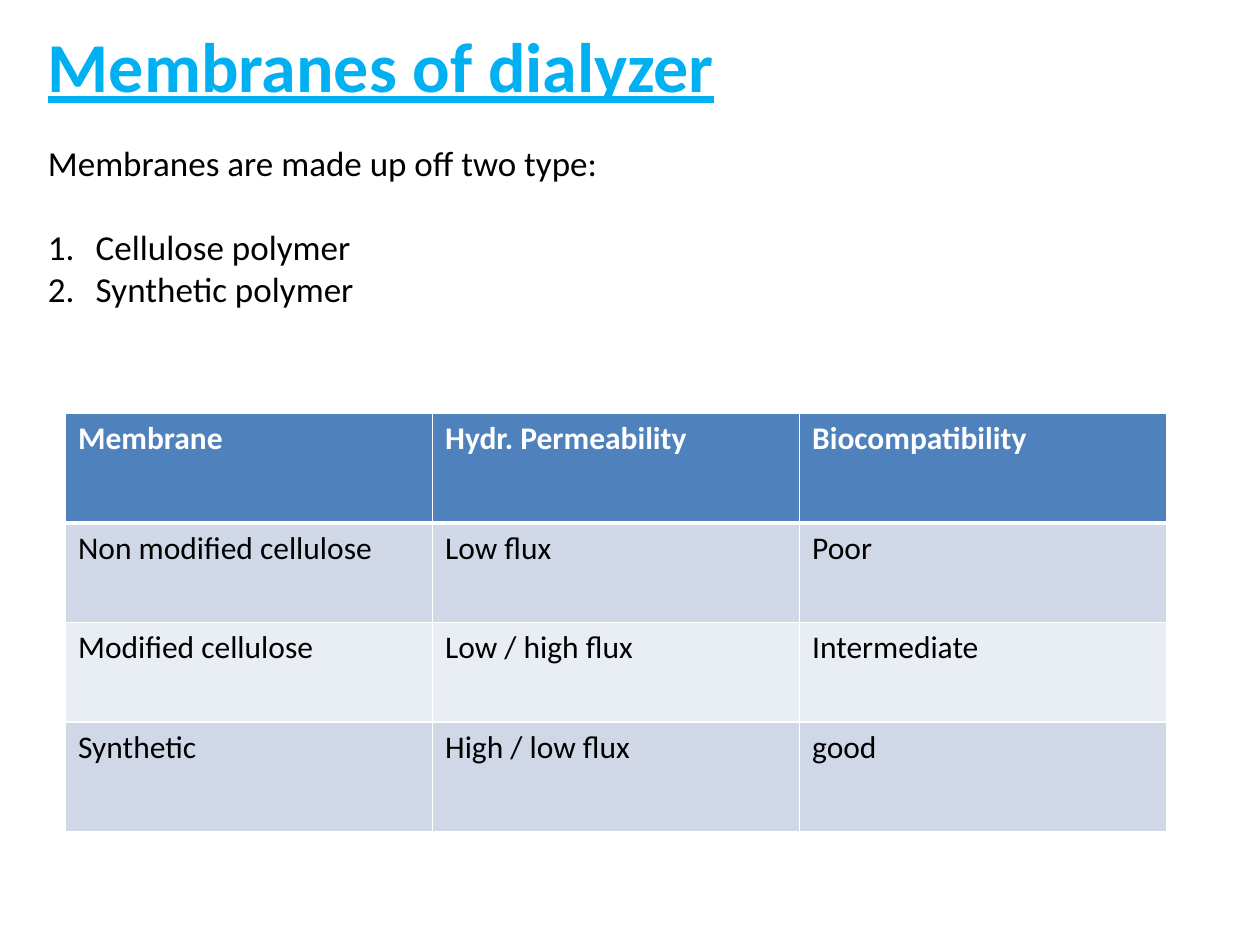
"""Build a slide on the membranes used in a dialyzer."""
from pptx import Presentation
from pptx.dml.color import RGBColor
from pptx.enum.text import MSO_ANCHOR, MSO_AUTO_SIZE, PP_ALIGN
from pptx.oxml import parse_xml
from pptx.oxml.ns import nsdecls
from pptx.util import Inches, Pt

FONT = "Calibri"
SKY = RGBColor(0x00, 0xB0, 0xF0)
BLACK = RGBColor(0x00, 0x00, 0x00)
WHITE = RGBColor(0xFF, 0xFF, 0xFF)
HEADER = RGBColor(0x4F, 0x81, 0xBD)
BANDS = (RGBColor(0xE9, 0xED, 0xF4), RGBColor(0xD0, 0xD8, 0xE8))

TITLE = "Membranes of dialyzer"
INTRO = "Membranes are made up off two type:"
POLYMERS = ["Cellulose polymer", "Synthetic polymer"]
MEMBRANES = [
    ("Membrane", "Hydr. Permeability", "Biocompatibility"),
    ("Non modified cellulose", "Low flux", "Poor"),
    ("Modified cellulose", "Low / high flux", "Intermediate"),
    ("Synthetic", "High / low flux", "good"),
]
ROW_HEIGHTS = (0.87, 0.79, 0.79, 0.87)
TABLE_LEFT, TABLE_TOP, TABLE_WIDTH = 0.52, 3.28, 8.74


def style(font, size, color, bold=False):
    font.name, font.size, font.bold = FONT, Pt(size), bold
    font.color.rgb = color


def place(box, left, top, width, height):
    box.left, box.top = Inches(left), Inches(top)
    box.width, box.height = Inches(width), Inches(height)
    frame = box.text_frame
    frame.word_wrap = False
    frame.auto_size = MSO_AUTO_SIZE.NONE
    frame.vertical_anchor = MSO_ANCHOR.TOP
    return frame


def set_bullet(paragraph, indent, bullet):
    props = paragraph._p.get_or_add_pPr()
    props.set("marL", str(Inches(indent)))
    props.set("indent", str(-Inches(indent)))
    props.append(parse_xml(f"<a:{bullet} {nsdecls('a')}/>"))


def set_borders(cell, widths):
    props = cell._tc.get_or_add_tcPr()
    for side, width in widths.items():
        props.append(parse_xml(
            f'<a:ln{side} {nsdecls("a")} w="{Pt(width)}"><a:solidFill>'
            f'<a:srgbClr val="{WHITE}"/></a:solidFill></a:ln{side}>'))


def add_title(page):
    frame = place(page.shapes.title, 0.28, 0.13, 5.55, 1.08)
    frame.text = TITLE
    paragraph = frame.paragraphs[0]
    paragraph.alignment = PP_ALIGN.LEFT
    span = paragraph.runs[0]
    style(span.font, 40, SKY, bold=True)
    span.font.underline = True


def add_body(page):
    frame = place(page.placeholders[1], 0.28, 1.07, 4.61, 1.45)
    frame.text = "\n".join([INTRO, *POLYMERS])
    for index, paragraph in enumerate(frame.paragraphs):
        paragraph.space_before = Pt(24 if index == 1 else 0)
        if index == 0:
            set_bullet(paragraph, 0, "buNone")
        else:
            set_bullet(paragraph, 0.38, 'buAutoNum type="arabicPeriod"')
        style(paragraph.runs[0].font, 20, BLACK)


def add_membrane_table(page):
    columns = len(MEMBRANES[0])
    table = page.shapes.add_table(
        len(MEMBRANES), columns, Inches(TABLE_LEFT), Inches(TABLE_TOP),
        Inches(TABLE_WIDTH), Inches(sum(ROW_HEIGHTS))).table
    for column in table.columns:
        column.width = Inches(TABLE_WIDTH / columns)
    for index, (texts, height) in enumerate(zip(MEMBRANES, ROW_HEIGHTS)):
        row = table.rows[index]
        row.height = Inches(height)
        is_header = index == 0
        borders = {"L": 1, "R": 1, "T": 3 if index == 1 else 1, "B": 3 if is_header else 1}
        for cell, text in zip(row.cells, texts):
            cell.text = text
            set_borders(cell, borders)
            cell.fill.solid()
            cell.fill.fore_color.rgb = HEADER if is_header else BANDS[index % 2]
            span = cell.text_frame.paragraphs[0].runs[0]
            style(span.font, 18, WHITE if is_header else BLACK, bold=is_header)


def main():
    deck = Presentation()
    deck.slide_width, deck.slide_height = Inches(10), Inches(7.5)
    page = deck.slides.add_slide(deck.slide_layouts[1])
    add_title(page)
    add_body(page)
    add_membrane_table(page)
    deck.save("out.pptx")


if __name__ == "__main__":
    main()
